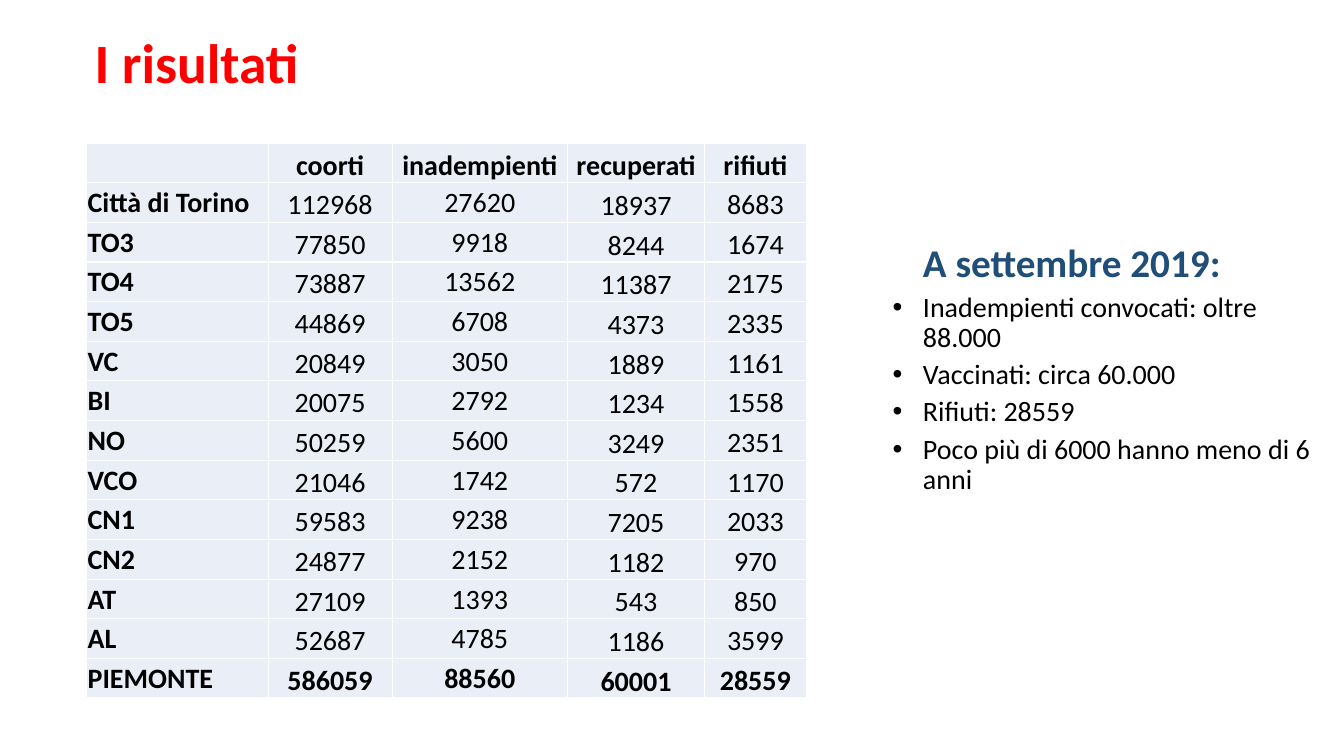
from dataclasses import dataclass

from lxml import etree
from pptx import Presentation
from pptx.dml.color import RGBColor
from pptx.enum.text import MSO_ANCHOR, PP_ALIGN
from pptx.oxml.ns import qn
from pptx.util import Pt

TOP, MIDDLE, BOTTOM = MSO_ANCHOR.TOP, MSO_ANCHOR.MIDDLE, MSO_ANCHOR.BOTTOM
LEFT, CENTER = PP_ALIGN.LEFT, PP_ALIGN.CENTER
BLANK_LAYOUT = 6


@dataclass(frozen=True)
class Theme:
    font: str = "Calibri"
    title_color: str = "FF0000"
    heading_color: str = "1F4E79"
    text_color: str = "000000"
    cell_fill: str = "EAEFF7"
    border_color: str = "FFFFFF"
    title_size: float = 39.6
    heading_size: float = 28
    text_size: float = 20
    border_width: float = 1
    line_spacing: float = 0.9
    loose_spacing: float = 1.15


class SlideBuilder:
    def __init__(self, slide, theme):
        self.slide = slide
        self.theme = theme

    def add_run(self, paragraph, text, size, color, bold=False):
        run = paragraph.add_run()
        run.text = text
        run.font.name = self.theme.font
        run.font.size = Pt(size)
        run.font.bold = bold
        run.font.color.rgb = RGBColor.from_string(color)

    def add_text_box(self, left, top, width, height, anchor):
        text_frame = self.slide.shapes.add_textbox(
            Pt(left), Pt(top), Pt(width), Pt(height)).text_frame
        text_frame.word_wrap = True
        text_frame.vertical_anchor = anchor
        return text_frame

    def add_title(self, text, left, top, width, height):
        paragraph = self.add_text_box(left, top, width, height, MIDDLE).paragraphs[0]
        paragraph.line_spacing = self.theme.line_spacing
        self.add_run(paragraph, text, self.theme.title_size, self.theme.title_color, True)

    def add_bullet_list(self, heading, items, left, top, width, height):
        theme = self.theme
        text_frame = self.add_text_box(left, top, width, height, TOP)
        text_frame.margin_right = Pt(5)
        paragraph = text_frame.paragraphs[0]
        self.indent(paragraph, 63.2, 0)
        self.add_run(paragraph, heading, theme.heading_size, theme.heading_color, True)
        for item in items:
            paragraph = text_frame.add_paragraph()
            self.indent(paragraph, 63.2, -21.6)
            paragraph.space_before = Pt(5)
            properties = paragraph._p.get_or_add_pPr()
            etree.SubElement(properties, qn("a:buFont"), typeface="Arial")
            etree.SubElement(properties, qn("a:buChar"), char="•")
            self.add_run(paragraph, item, theme.text_size, theme.text_color)

    def indent(self, paragraph, margin, first_line):
        paragraph.line_spacing = self.theme.line_spacing
        properties = paragraph._p.get_or_add_pPr()
        properties.set("marL", str(Pt(margin)))
        properties.set("indent", str(Pt(first_line)))

    def add_table(self, rows, left, top, column_widths, row_height):
        table = self.slide.shapes.add_table(
            len(rows), len(column_widths), Pt(left), Pt(top),
            Pt(sum(column_widths)), Pt(row_height * len(rows))).table
        table.first_row = False
        table.horz_banding = False
        for column, width in zip(table.columns, column_widths):
            column.width = Pt(width)
        last_row = len(rows) - 1
        for row_index, values in enumerate(rows):
            table.rows[row_index].height = Pt(row_height)
            is_header = row_index == 0
            for column_index, value in enumerate(values):
                is_label = column_index == 0
                self.style_cell(
                    table.cell(row_index, column_index), value,
                    bold=is_header or is_label or row_index == last_row,
                    anchor=BOTTOM if is_header else MIDDLE,
                    alignment=LEFT if is_label else CENTER,
                    loose=not is_header and column_index in (1, 3, 4),
                    wide=not is_header and column_index in (1, 4))

    def style_cell(self, cell, value, bold, anchor, alignment, loose, wide):
        theme = self.theme
        cell.margin_left = cell.margin_right = Pt(3.6 if wide else 0.7)
        cell.margin_top = Pt(0 if wide else 0.7)
        cell.margin_bottom = Pt(0)
        cell.vertical_anchor = anchor
        self.add_borders(cell)
        cell.fill.solid()
        cell.fill.fore_color.rgb = RGBColor.from_string(theme.cell_fill)
        if value:
            paragraph = cell.text_frame.paragraphs[0]
            paragraph.alignment = alignment
            if loose:
                paragraph.line_spacing = theme.loose_spacing
            self.add_run(paragraph, value, theme.text_size, theme.text_color, bold)

    def add_borders(self, cell):
        properties = cell._tc.get_or_add_tcPr()
        for side in ("a:lnL", "a:lnR", "a:lnT", "a:lnB"):
            line = etree.SubElement(properties, qn(side), w=str(Pt(self.theme.border_width)))
            fill = etree.SubElement(line, qn("a:solidFill"))
            etree.SubElement(fill, qn("a:srgbClr"), val=self.theme.border_color)


RESULTS = [
    ("", "coorti", "inadempienti", "recuperati", "rifiuti"),
    ("Città di Torino", "112968", "27620", "18937", "8683"),
    ("TO3", "77850", "9918", "8244", "1674"),
    ("TO4", "73887", "13562", "11387", "2175"),
    ("TO5", "44869", "6708", "4373", "2335"),
    ("VC", "20849", "3050", "1889", "1161"),
    ("BI", "20075", "2792", "1234", "1558"),
    ("NO", "50259", "5600", "3249", "2351"),
    ("VCO", "21046", "1742", "572", "1170"),
    ("CN1", "59583", "9238", "7205", "2033"),
    ("CN2", "24877", "2152", "1182", "970"),
    ("AT", "27109", "1393", "543", "850"),
    ("AL", "52687", "4785", "1186", "3599"),
    ("PIEMONTE", "586059", "88560", "60001", "28559"),
]

SUMMARY = [
    "Inadempienti convocati: oltre 88.000",
    "Vaccinati: circa 60.000",
    "Rifiuti: 28559",
    "Poco più di 6000 hanno meno di 6 anni",
]


def main():
    presentation = Presentation()
    presentation.slide_width = Pt(960)
    presentation.slide_height = Pt(540)
    slide = presentation.slides.add_slide(presentation.slide_layouts[BLANK_LAYOUT])
    builder = SlideBuilder(slide, Theme())
    builder.add_title("I risultati", 60.5, 23.8, 272, 46)
    builder.add_bullet_list("A settembre 2019:", SUMMARY, 589, 170.6, 355, 234.7)
    builder.add_table(RESULTS, 61.9, 102.2, (129.6, 88.6, 125.3, 97.9, 72.7), 28.3)
    presentation.save("out.pptx")


if __name__ == "__main__":
    main()
